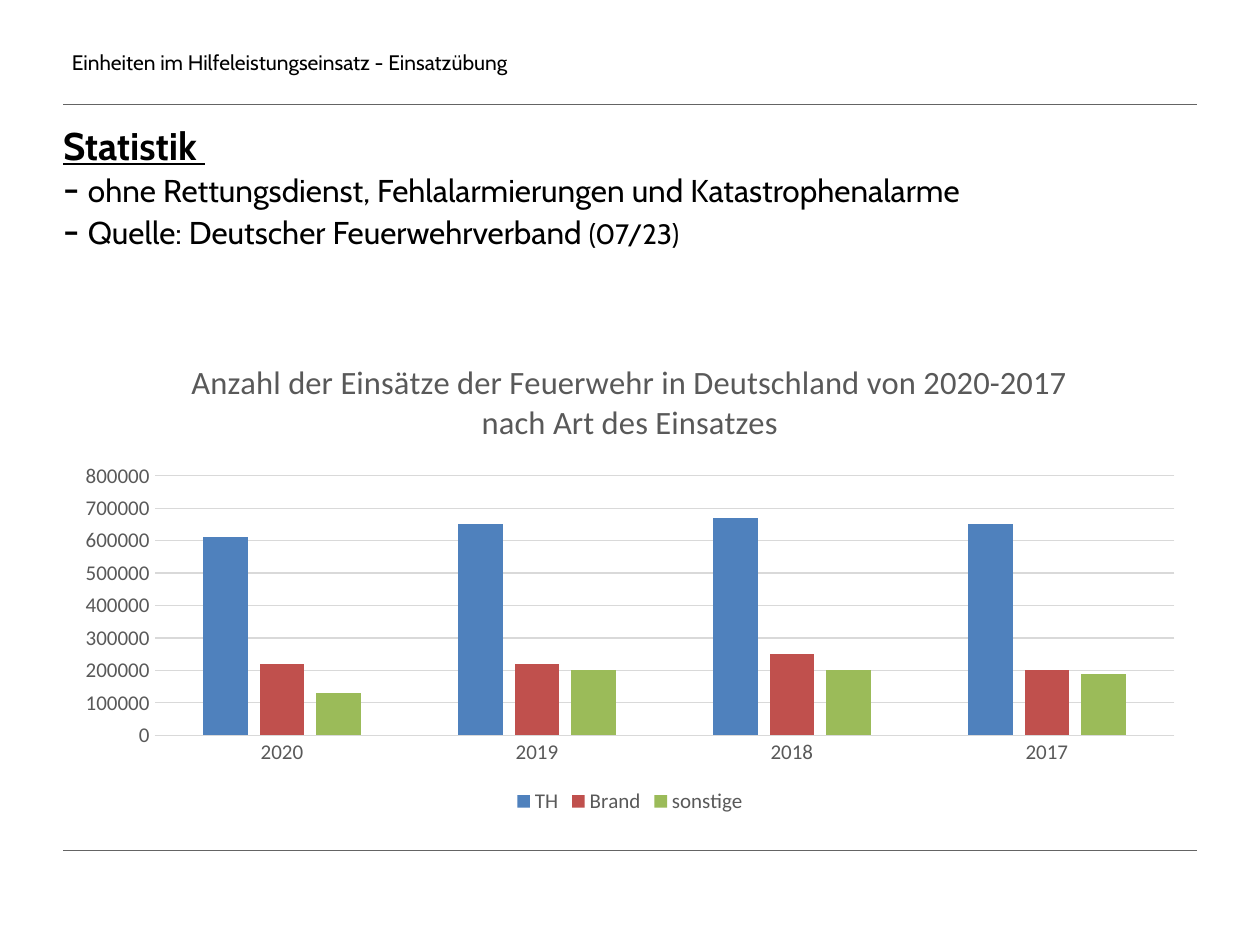
"""Build the statistics slide on fire service operations in Germany."""
from dataclasses import dataclass

from lxml import etree
from pptx import Presentation
from pptx.chart.data import CategoryChartData
from pptx.dml.color import RGBColor
from pptx.enum.chart import XL_CHART_TYPE, XL_LEGEND_POSITION, XL_TICK_MARK
from pptx.enum.shapes import MSO_CONNECTOR
from pptx.enum.text import MSO_ANCHOR, MSO_AUTO_SIZE, PP_ALIGN
from pptx.oxml.ns import qn
from pptx.util import Inches, Pt

COLUMNS = XL_CHART_TYPE.COLUMN_CLUSTERED
LEGEND_BOTTOM = XL_LEGEND_POSITION.BOTTOM
NO_TICK = XL_TICK_MARK.NONE
STRAIGHT = MSO_CONNECTOR.STRAIGHT
TOP, MIDDLE = MSO_ANCHOR.TOP, MSO_ANCHOR.MIDDLE
NO_FIT = MSO_AUTO_SIZE.NONE
LEFT = PP_ALIGN.LEFT

TEXT_FONT, CHART_FONT = "Cabin", "Calibri"
COLORS = {
    "text": "000000", "rule": "646464", "label": "595959", "grid": "D9D9D9",
    "TH": "4F81BD", "Brand": "C0504D", "sonstige": "9BBB59",
}
MARGIN, CONTENT_WIDTH = 0.5, 9
YEARS = ("2020", "2019", "2018", "2017")


@dataclass
class OperationType:
    name: str
    counts: tuple


@dataclass
class Span:
    text: str
    size: float
    bold: bool = False
    underline: bool = False


OPERATIONS = (
    OperationType("TH", (610000, 650000, 670000, 650000)),
    OperationType("Brand", (220000, 220000, 250000, 200000)),
    OperationType("sonstige", (130000, 200000, 200000, 190000)),
)
HEADER = [[Span("Einheiten im Hilfeleistungseinsatz - Einsatzübung", 12)]]
STATISTICS = [
    [Span("Statistik ", 22, bold=True, underline=True)],
    [Span("- ", 22),
     Span("ohne Rettungsdienst, Fehlalarmierungen und Katastrophenalarme", 18)],
    [Span("- ", 22), Span("Quelle: Deutscher Feuerwehrverband ", 18),
     Span("(07/23)", 16)],
]
CHART_TITLE = ("Anzahl der Einsätze der Feuerwehr in Deutschland "
               "von 2020-2017 nach Art des Einsatzes")


def rgb(key: str) -> RGBColor:
    return RGBColor.from_string(COLORS[key])


def style_font(font, *, size: float, color: str, face: str = CHART_FONT,
               bold: bool = False, underline: bool = False) -> None:
    font.name, font.size = face, Pt(size)
    font.bold, font.underline = bold, underline
    font.color.rgb = rgb(color)


def write_text(frame, lines: list, *, anchor=TOP, indent: float = 0,
               line_height: float | None = None) -> None:
    frame.word_wrap = True
    frame.auto_size = NO_FIT
    frame.vertical_anchor = anchor
    frame.margin_left = Inches(indent)
    frame.margin_top = frame.margin_right = frame.margin_bottom = 0
    paragraph = frame.paragraphs[0]
    paragraph.alignment = LEFT
    if line_height:
        paragraph.line_spacing = Pt(line_height)
    for number, spans in enumerate(lines):
        if number:
            paragraph.add_line_break()
        for span in spans:
            run = paragraph.add_run()
            run.text = span.text
            style_font(run.font, size=span.size, color="text", face=TEXT_FONT,
                       bold=span.bold, underline=span.underline)


def draw_rule(slide, top: float) -> None:
    rule = slide.shapes.add_connector(
        STRAIGHT, Inches(MARGIN), Inches(top),
        Inches(MARGIN + CONTENT_WIDTH), Inches(top))
    rule.line.color.rgb = rgb("rule")
    rule.line.width = Pt(0.25)
    etree.SubElement(rule.line._get_or_add_ln().getparent(), qn("a:effectLst"))


def style_axis(axis) -> None:
    axis.major_tick_mark = axis.minor_tick_mark = NO_TICK
    style_font(axis.tick_labels.font, size=12, color="label")


def style_grey_line(line) -> None:
    line.color.rgb = rgb("grid")
    line.width = Pt(0.75)


def draw_operations_chart(slide) -> None:
    data = CategoryChartData()
    data.categories = YEARS
    for operation in OPERATIONS:
        data.add_series(operation.name, operation.counts)
    chart = slide.shapes.add_chart(
        COLUMNS, Inches(MARGIN), Inches(2.67),
        Inches(CONTENT_WIDTH), Inches(3.83), data).chart
    style_font(chart.font, size=10, color="text")

    chart.has_title = True
    chart.chart_title.include_in_layout = False
    title_run = chart.chart_title.text_frame.paragraphs[0].add_run()
    title_run.text = CHART_TITLE
    style_font(title_run.font, size=18.6, color="label")

    chart.has_legend = True
    chart.legend.position = LEGEND_BOTTOM
    chart.legend.include_in_layout = False
    style_font(chart.legend.font, size=12, color="label")

    style_axis(chart.category_axis)
    style_grey_line(chart.category_axis.format.line)
    counts = chart.value_axis
    style_axis(counts)
    counts.minimum_scale, counts.maximum_scale = 0, 800000
    counts.major_unit = 100000
    counts.format.line.fill.background()
    style_grey_line(counts.major_gridlines.format.line)

    plot = chart.plots[0]
    plot.gap_width, plot.overlap = 219, -27
    plot.vary_by_categories = False
    for series in plot.series:
        series.format.fill.solid()
        series.format.fill.fore_color.rgb = rgb(series.name)


def main() -> None:
    deck = Presentation()
    deck.slide_width, deck.slide_height = Inches(10), Inches(7.5)
    slide = deck.slides.add_slide(deck.slide_layouts[5])

    for top in (0.83, 6.75):
        draw_rule(slide, top)
    header = slide.shapes.add_textbox(
        Inches(MARGIN), Inches(0.33), Inches(6.08), Inches(0.33))
    write_text(header.text_frame, HEADER, anchor=MIDDLE, indent=0.07)

    draw_operations_chart(slide)

    statistics = slide.shapes.title
    statistics.left, statistics.top = Inches(MARGIN), Inches(1)
    statistics.width, statistics.height = Inches(7.17), Inches(1.25)
    write_text(statistics.text_frame, STATISTICS, line_height=24)

    deck.save("out.pptx")


if __name__ == "__main__":
    main()
